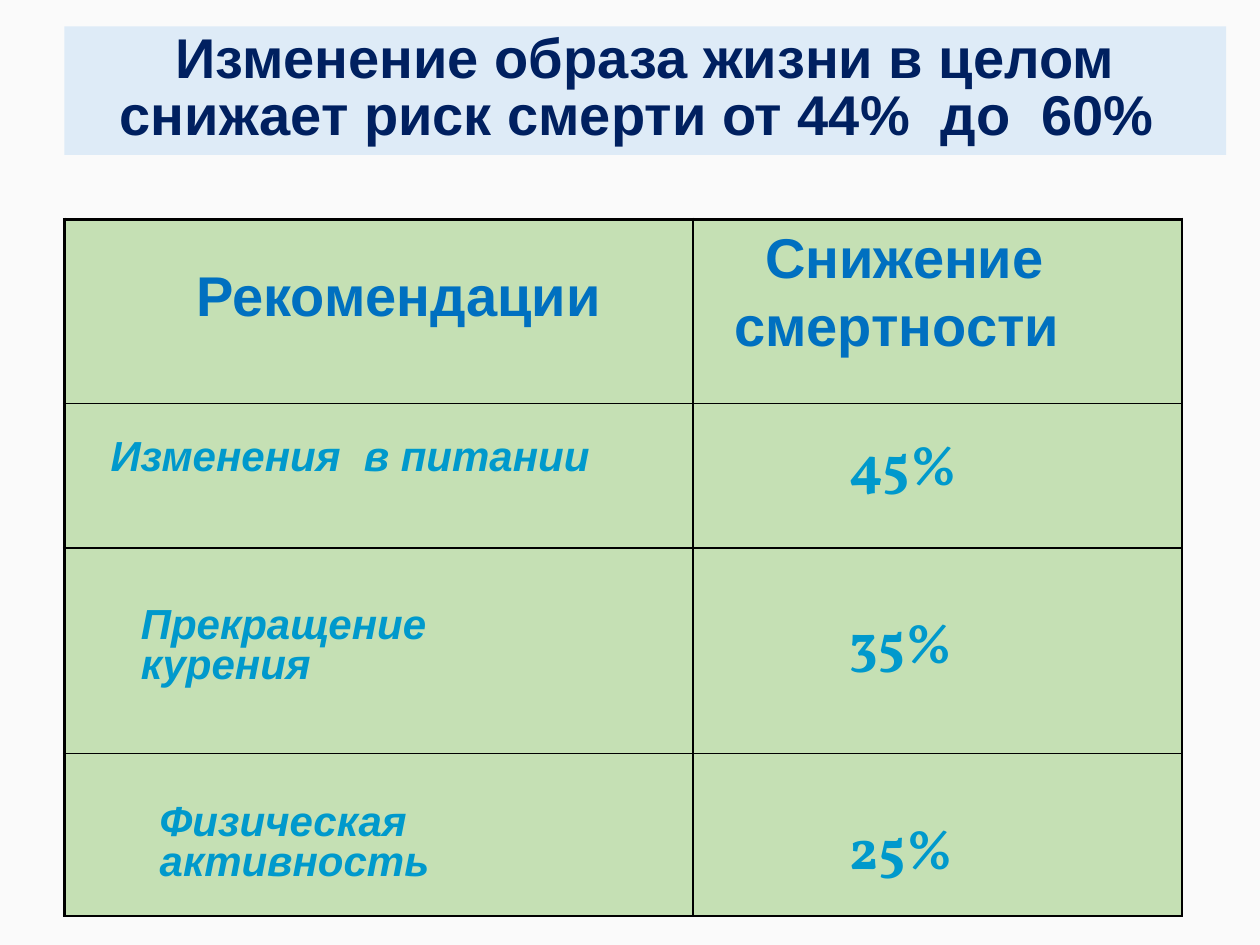
from lxml import etree
from pptx import Presentation
from pptx import util as u
from pptx.dml import color
from pptx.enum import text
from pptx.oxml import ns

HEAD = dict(name="Arial", size=u.Pt(32), bold=True)
ITEM = dict(name="Arial", size=u.Pt(24), bold=True, italic=True)
RATE = dict(name="Vollkorn", size=u.Pt(32), bold=True)


def tint(code):
    """Turn a hex string into a colour."""
    return color.RGBColor.from_string(code)


def paint(obj, code):
    """Give a solid fill to a shape, cell, font or background."""
    obj.fill.solid()
    obj.fill.fore_color.rgb = tint(code)


def put(shape, x, y, w, h):
    """Place a shape by centimetres."""
    shape.left, shape.top, shape.width, shape.height = map(u.Cm, (x, y, w, h))


def write(shape, lines, font, hue, align=text.PP_ALIGN.LEFT, gap=None):
    """Write formatted paragraphs into a shape."""
    frame = shape.text_frame
    frame.word_wrap = True
    frame.auto_size = text.MSO_AUTO_SIZE.SHAPE_TO_FIT_TEXT
    frame.vertical_anchor = text.MSO_ANCHOR.TOP
    for i, line in enumerate(lines):
        par = frame.add_paragraph() if i else frame.paragraphs[0]
        par.alignment = align
        par.line_spacing = gap
        run = par.add_run()
        run.text = line
        for key, val in font.items():
            setattr(run.font, key, val)
        run.font.color.rgb = tint(hue)


def edge(cell, widths):
    """Draw black cell borders, given widths in points by side."""
    props = cell._tc.get_or_add_tcPr()
    for i, (side, width) in enumerate(widths.items()):
        line = etree.Element(ns.qn(f"a:ln{side}"), w=str(u.Pt(width)))
        fill = etree.SubElement(line, ns.qn("a:solidFill"))
        etree.SubElement(fill, ns.qn("a:srgbClr"), val="000000")
        props.insert(i, line)


def title(slide, x, y, w, h):
    """Format the title band."""
    band = slide.shapes.title
    put(band, x, y, w, h)
    paint(band, "DEEBF7")
    write(band, ["Изменение образа жизни в целом снижает риск смерти от 44%  до  60% "],
          HEAD, "002060", text.PP_ALIGN.CENTER, 0.85)


def grid(slide, x, y, cols, rows):
    """Draw the green table grid."""
    table = slide.shapes.add_table(len(rows), len(cols), u.Cm(x), u.Cm(y),
                                   u.Cm(sum(cols)), u.Cm(sum(rows))).table
    table.first_row = table.horz_banding = False
    for col, w in zip(table.columns, cols):
        col.width = u.Cm(w)
    for r, h in enumerate(rows):
        table.rows[r].height = u.Cm(h)
        for c in range(len(cols)):
            cell = table.cell(r, c)
            paint(cell, "C5E0B4")
            edge(cell, dict(L=1 if c else 2.25, R=1, T=1 if r else 2.25, B=1))


def labels(slide, x, y):
    """Set the headings, advice and rates over the grid."""
    def label(dx, dy, w, h, *args):
        """Add one text box relative to the grid."""
        box = slide.shapes.add_textbox(0, 0, 0, 0)
        put(box, x + dx, y + dy, w, h)
        write(box, *args)

    left = text.PP_ALIGN.LEFT
    label(2.41, 0.71, 9.02, 1.63, ["Рекомендации"], HEAD, "0070C0")
    label(13, -0.05, 7.87, 3.84, ["Снижение смертности "], HEAD, "0070C0",
          text.PP_ALIGN.CENTER)
    for dx, dy, w, h, lines, top, rate in (
            (0.68, 4.32, 10.92, 1.07, ["Изменения  в питании"], 4.11, "45%"),
            (1.29, 7.7, 7.7, 1.91, ["Прекращение", "курения"], 7.7, "35%"),
            (1.67, 11.66, 7.42, 1.91, ["Физическая", "активность"], 11.86, "25%")):
        label(dx, dy, w, h, lines, ITEM, "0099CC", left, 0.8)
        label(15.57, top, 3, 1.63, [rate], RATE, "0099CC")


def main():
    """Build the slide and save it."""
    deck = Presentation()
    deck.slide_width, deck.slide_height = u.Cm(25.4), u.Cm(19.05)
    slide = deck.slides.add_slide(deck.slide_layouts[5])
    paint(slide.background, "FAFAFA")
    title(slide, 1.3, 0.53, 23.42, 2.59)
    grid(slide, 1.3, 4.42, (12.67, 9.86), (3.71, 2.92, 4.14, 3.28))
    labels(slide, 1.3, 4.42)
    deck.save("out.pptx")


if __name__ == "__main__":
    main()
